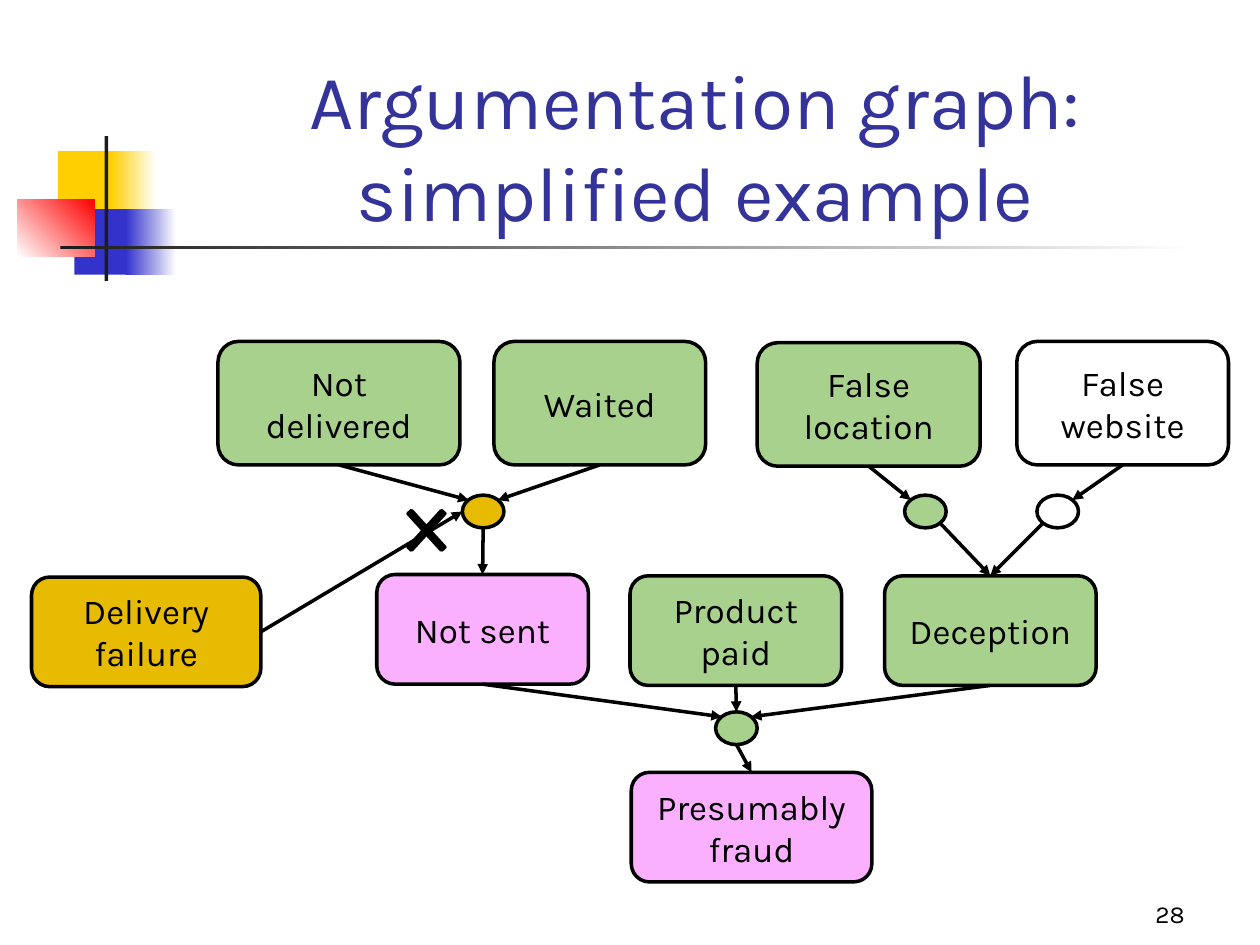
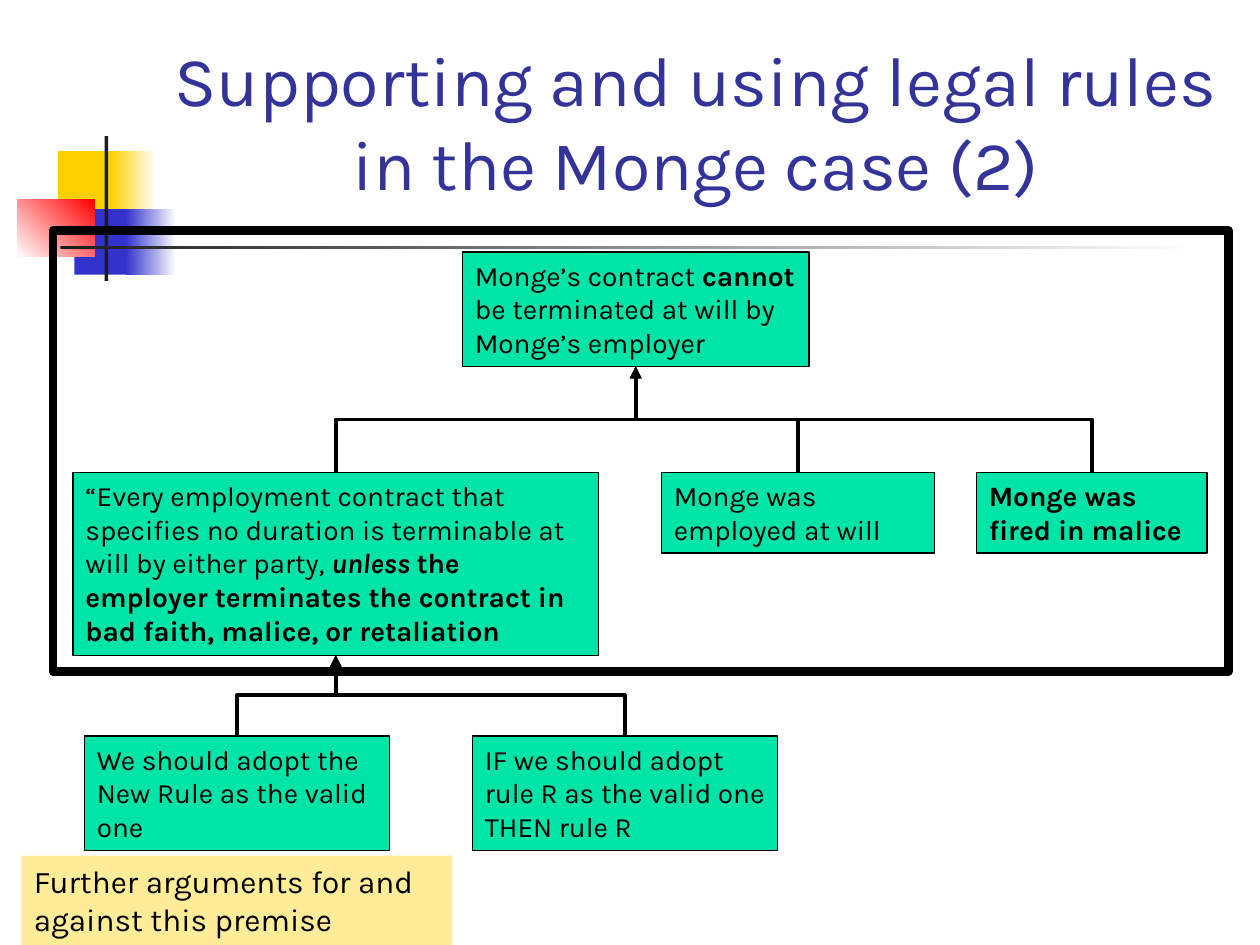
import pptx
import pptx.util
import pptx.dml.color
import pptx.enum.shapes
import pptx.enum.text
import pptx.oxml
import pptx.oxml.ns
from dataclasses import dataclass
from lxml import etree

Inches = pptx.util.Inches
Pt = pptx.util.Pt
SHAPE = pptx.enum.shapes.MSO_SHAPE
CONNECTOR = pptx.enum.shapes.MSO_CONNECTOR
ALIGN = pptx.enum.text.PP_ALIGN
ANCHOR = pptx.enum.text.MSO_ANCHOR
AUTO_SIZE = pptx.enum.text.MSO_AUTO_SIZE


@dataclass(frozen=True)
class Theme:
    font: str = "Karla"
    black: str = "000000"
    white: str = "FFFFFF"
    title: str = "333399"
    yellow: str = "FFCF01"
    blue: str = "3333CC"
    red: str = "FF0000"
    rule: str = "1C1C1C"
    accepted: str = "A9D18E"
    presumed: str = "FBAFFF"
    defeated: str = "E7BB01"
    premise: str = "00E4A8"
    remark: str = "FFEC99"
    title_size: int = 44
    long_title_size: int = 40
    node_size: int = 20
    remark_size: int = 18
    premise_size: int = 16
    number_size: int = 14


# Attachment points as fractions of a shape's width and height
SITES = {
    "top": (0.5, 0), "bottom": (0.5, 1), "left": (0, 0.5), "right": (1, 0.5),
    "top left": (0.15, 0.15), "top right": (0.85, 0.15),
    "bottom left": (0.15, 0.85), "bottom right": (0.85, 0.85),
}


def site(shape, name):
    across, down = SITES[name]
    return int(shape.left + shape.width * across), int(shape.top + shape.height * down)


def rgb(value):
    return pptx.dml.color.RGBColor.from_string(value)


class Deck:
    def __init__(self, theme):
        self.theme = theme
        self.presentation = pptx.Presentation()
        self.presentation.slide_width = Inches(10)
        self.presentation.slide_height = Inches(7.5)
        self.slide = None

    def new_slide(self, title, top, size):
        self.slide = self.presentation.slides.add_slide(self.presentation.slide_layouts[6])
        self.ornament()
        self.text((1.26, top, 8.52, 1.25), title, size, self.theme.title, ALIGN.CENTER)

    def ornament(self):
        t = self.theme
        self.box((0.46, 1.2, 0.48, 0.52), t.yellow)
        self.fade((0.88, 1.2, 0.36, 0.52), t.yellow, t.white)
        self.box((0.59, 1.66, 0.46, 0.52), t.blue)
        self.fade((1, 1.66, 0.4, 0.52), t.blue, t.white)
        self.fade((0.14, 1.58, 0.61, 0.46), t.white, t.red, angle=45)
        self.box((0.83, 1.08, 0.03, 1.15), t.rule)
        self.fade((0.48, 1.95, 9, 0.03), t.rule, t.white)

    def box(self, place, fill=None, line=None, kind=SHAPE.RECTANGLE):
        """A preset shape; line is the outline width in points."""
        shape = self.slide.shapes.add_shape(kind, *map(Inches, place))
        shape.shadow.inherit = False
        if fill:
            shape.fill.solid()
            shape.fill.fore_color.rgb = rgb(fill)
        else:
            shape.fill.background()
        if line:
            shape.line.color.rgb = rgb(self.theme.black)
            shape.line.width = Pt(line)
        else:
            shape.line.fill.background()
        return shape

    def fade(self, place, start, end, angle=0):
        shape = self.box(place)
        shape.fill.gradient()
        shape.fill.gradient_angle = angle
        for stop, color in zip(shape.fill.gradient_stops, (start, end)):
            stop.color.rgb = rgb(color)

    def format(self, frame, size, color, align, anchor):
        frame.word_wrap = True
        frame.vertical_anchor = anchor
        for paragraph in frame.paragraphs:
            paragraph.alignment = align
            for run in paragraph.runs:
                run.font.name = self.theme.font
                run.font.size = Pt(size)
                run.font.color.rgb = rgb(color)

    def text(self, place, words, size, color, align):
        frame = self.slide.shapes.add_textbox(*map(Inches, place)).text_frame
        frame.text = words
        self.format(frame, size, color, align, ANCHOR.BOTTOM)

    def node(self, place, words, fill):
        shape = self.box(place, fill, 2, SHAPE.ROUNDED_RECTANGLE)
        shape.text_frame.text = words
        self.format(shape.text_frame, self.theme.node_size, self.theme.black,
                    ALIGN.CENTER, ANCHOR.MIDDLE)
        return shape

    def junction(self, left, top, fill):
        return self.box((left, top, 0.33, 0.26), fill, 2, SHAPE.OVAL)

    def statement(self, place, parts, fill, size, line=None):
        """A left-aligned block; parts are (words, style), style holding b or i."""
        shape = self.box(place, fill, line)
        frame = shape.text_frame
        for words, style in parts:
            run = frame.paragraphs[0].add_run()
            run.text = words
            run.font.bold = "b" in style
            run.font.italic = "i" in style
        self.format(frame, size, self.theme.black, ALIGN.LEFT, ANCHOR.TOP)
        frame.auto_size = AUTO_SIZE.SHAPE_TO_FIT_TEXT
        return shape

    def premise(self, place, *parts):
        return self.statement(place, parts, self.theme.premise, self.theme.premise_size, 0.75)

    def connect(self, kind, start, end, width):
        connector = self.slide.shapes.add_connector(kind, *start, *end)
        connector.line.color.rgb = rgb(self.theme.black)
        connector.line.width = Pt(width)
        properties = connector._element.spPr
        head = etree.SubElement(connector.line._get_or_add_ln(),
                                pptx.oxml.ns.qn("a:tailEnd"))
        head.set("type", "triangle")
        etree.SubElement(properties, pptx.oxml.ns.qn("a:effectLst"))
        return connector

    def arrow(self, source, leave, target, arrive):
        self.connect(CONNECTOR.STRAIGHT, site(source, leave), site(target, arrive), 2)

    def support(self, source, target):
        """An elbow that rises from source, runs sideways and rises into target."""
        (x1, y1), (x2, y2) = site(source, "top"), site(target, "bottom")
        middle_x, middle_y = (x1 + x2) // 2, (y1 + y2) // 2
        half_rise, half_run = (y1 - y2) // 2, abs(x2 - x1) // 2
        # The elbow leaves sideways by default, so it is laid out flat and turned
        side, turn = (1, 90) if x2 > x1 else (-1, 270)
        start = middle_x + side * half_rise, middle_y + half_run
        end = middle_x - side * half_rise, middle_y - half_run
        elbow = self.connect(CONNECTOR.ELBOW, start, end, 2.25)
        elbow._element.spPr.xfrm.set("rot", str(turn * 60000))


def argumentation_graph(deck):
    t = deck.theme
    deck.new_slide("Argumentation graph: simplified example", 0.68, t.title_size)
    deck.text((7.42, 6.92, 2.08, 0.5), "28", t.number_size, t.black, ALIGN.RIGHT)

    # Evidence
    not_delivered = deck.node((1.73, 2.71, 1.92, 0.98), "Not delivered", t.accepted)
    waited = deck.node((3.92, 2.71, 1.68, 0.98), "Waited", t.accepted)
    location = deck.node((6.01, 2.72, 1.77, 0.98), "False location", t.accepted)
    website = deck.node((8.07, 2.71, 1.68, 0.98), "False website", t.white)

    # Intermediate claims and conclusion
    failure = deck.node((0.25, 4.58, 1.82, 0.87), "Delivery failure", t.defeated)
    not_sent = deck.node((2.99, 4.56, 1.68, 0.87), "Not sent", t.presumed)
    paid = deck.node((5, 4.57, 1.68, 0.87), "Product paid", t.accepted)
    deception = deck.node((7.02, 4.57, 1.68, 0.87), "Deception", t.accepted)
    fraud = deck.node((5.01, 6.13, 1.91, 0.87), "Presumably fraud", t.presumed)

    # Inferences
    sending = deck.junction(3.67, 3.93, t.defeated)
    by_location = deck.junction(7.18, 3.93, t.accepted)
    by_website = deck.junction(8.23, 3.93, t.white)
    concluding = deck.junction(5.68, 5.65, t.accepted)

    for link in (
        (not_delivered, "bottom", sending, "top left"),
        (waited, "bottom", sending, "top right"),
        (failure, "right", sending, "left"),
        (sending, "bottom", not_sent, "top"),
        (location, "bottom", by_location, "top left"),
        (website, "bottom", by_website, "top right"),
        (by_location, "bottom right", deception, "top"),
        (by_website, "bottom left", deception, "top"),
        (not_sent, "bottom", concluding, "top left"),
        (paid, "bottom", concluding, "top"),
        (deception, "bottom", concluding, "top right"),
        (concluding, "bottom", fraud, "top"),
    ):
        deck.arrow(*link)

    # The attack from delivery failure is struck out
    cross = deck.box((3.13, 3.93, 0.51, 0.56), t.black, 2, SHAPE.MATH_MULTIPLY)
    cross.adjustments[0] = 0.072


def monge_case(deck):
    t = deck.theme
    deck.new_slide("Supporting and using legal rules in the Monge case (2)",
                   0.42, t.long_title_size)

    # Conclusion and its premises
    conclusion = deck.premise((3.67, 2, 2.75, 0.91), ("Monge’s contract ", ""),
                              ("cannot ", "b"),
                              ("be terminated at will by Monge’s employer", ""))
    rule = deck.premise(
        (0.58, 3.75, 4.17, 1.45),
        ("“Every employment contract that specifies no duration is terminable "
         "at will by either party, ", ""),
        ("unless ", "bi"),
        ("the employer terminates the contract in bad faith, malice, or retaliation", "b"))
    employed = deck.premise((5.25, 3.75, 2.17, 0.64), ("Monge was employed at will", ""))
    fired = deck.premise((7.75, 3.75, 1.83, 0.64), ("Monge was fired in malice", "b"))

    # Support for the rule
    adopt = deck.premise((0.67, 5.84, 2.42, 0.91),
                         ("We should adopt the New Rule as the valid one", ""))
    validity = deck.premise((3.75, 5.84, 2.42, 0.91),
                            ("IF we should adopt rule R as the valid one THEN rule R", ""))

    for source, target in ((rule, conclusion), (employed, conclusion), (fired, conclusion),
                           (adopt, rule), (validity, rule)):
        deck.support(source, target)

    # Frame around the main argument, and the remark below
    deck.box((0.42, 1.83, 9.33, 3.5), line=4.75)
    deck.statement((0.17, 6.79, 3.42, 0.71),
                   [("Further arguments for and against this premise", "")],
                   t.remark, t.remark_size)


def main():
    deck = Deck(Theme())
    argumentation_graph(deck)
    monge_case(deck)
    deck.presentation.save("out.pptx")


if __name__ == "__main__":
    main()
